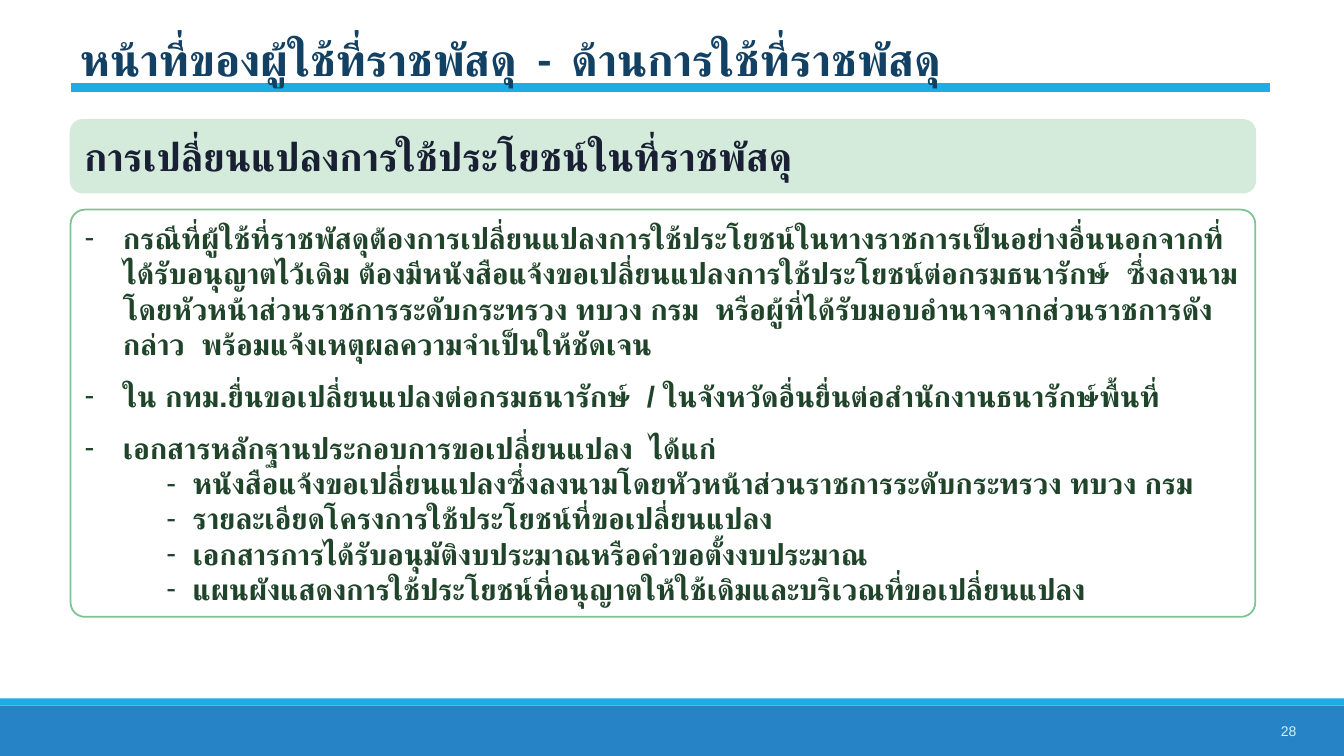
from dataclasses import dataclass

from lxml.etree import SubElement
from pptx import Presentation
from pptx.dml.color import RGBColor
from pptx.enum.shapes import MSO_CONNECTOR, MSO_SHAPE
from pptx.enum.text import MSO_ANCHOR, MSO_AUTO_SIZE, PP_ALIGN
from pptx.oxml.ns import qn
from pptx.util import Inches, Pt


@dataclass(frozen=True)
class Theme:
    """Colours, fonts and type sizes of the slide."""
    title_font: str = "Calibri"
    body_font: str = "Arial"
    title_color: str = "134163"
    heading_color: str = "1A2034"
    body_color: str = "1F442A"
    number_color: str = "D2EFFA"
    bar: str = "2683C6"
    accent: str = "1CADE4"
    heading_fill: str = "D4EBDB"
    panel_fill: str = "FFFFFF"
    panel_line: str = "7EC492"
    title_size: int = 32
    heading_size: int = 28
    body_size: int = 21
    number_size: int = 10
    outline_width: float = 1.25
    rule_width: int = 6


class SlideBuilder:
    """Draws styled elements on the current slide."""

    def __init__(self, slide, theme):
        self.slide = slide
        self.theme = theme

    def format_text(self, paragraph, size, color, font, bold=True):
        for run in paragraph.runs:
            run.font.size = Pt(size)
            run.font.bold = bold
            run.font.name = font
            run.font.color.rgb = RGBColor.from_string(color)
            SubElement(run.font._element, qn("a:cs")).set("typeface", font)

    def title(self, text, left, top, width, height):
        title = self.slide.shapes.title
        title.left, title.top = Inches(left), Inches(top)
        title.width, title.height = Inches(width), Inches(height)
        frame = title.text_frame
        frame.text = text
        frame.word_wrap = True
        frame.auto_size = MSO_AUTO_SIZE.NONE
        frame.vertical_anchor = MSO_ANCHOR.TOP
        paragraph = frame.paragraphs[0]
        paragraph.alignment = PP_ALIGN.LEFT
        self.format_text(paragraph, self.theme.title_size,
                         self.theme.title_color, self.theme.title_font)

    def box(self, kind, left, top, width, height, fill, line=None):
        shape = self.slide.shapes.add_shape(
            kind, Inches(left), Inches(top), Inches(width), Inches(height))
        shape.shadow.inherit = False
        shape.fill.solid()
        shape.fill.fore_color.rgb = RGBColor.from_string(fill)
        if line:
            shape.line.color.rgb = RGBColor.from_string(line)
            shape.line.width = Pt(self.theme.outline_width)
        else:
            shape.line.fill.background()
        return shape

    def rule(self, left, right, y):
        rule = self.slide.shapes.add_connector(
            MSO_CONNECTOR.STRAIGHT, Inches(left), Inches(y), Inches(right), Inches(y))
        rule.line.color.rgb = RGBColor.from_string(self.theme.accent)
        rule.line.width = Pt(self.theme.rule_width)
        SubElement(rule._element.spPr, qn("a:effectLst"))

    def heading(self, shape, text):
        frame = shape.text_frame
        frame.text = text
        frame.word_wrap = True
        frame.vertical_anchor = MSO_ANCHOR.MIDDLE
        paragraph = frame.paragraphs[0]
        paragraph.alignment = PP_ALIGN.LEFT
        self.format_text(paragraph, self.theme.heading_size,
                         self.theme.heading_color, self.theme.body_font)

    def bullets(self, shape, items):
        frame = shape.text_frame
        frame.word_wrap = True
        frame.vertical_anchor = MSO_ANCHOR.MIDDLE
        for index, (text, margin, hanging, space_before) in enumerate(items):
            paragraph = frame.add_paragraph() if index else frame.paragraphs[0]
            paragraph.text = text
            paragraph.alignment = PP_ALIGN.LEFT
            paragraph.space_before = Pt(space_before)
            properties = paragraph._p.get_or_add_pPr()
            properties.set("marL", str(Inches(margin)))
            properties.set("indent", str(-Inches(hanging)))
            SubElement(properties, qn("a:buFont")).set("typeface", self.theme.body_font)
            SubElement(properties, qn("a:buChar")).set("char", "-")
            self.format_text(paragraph, self.theme.body_size,
                             self.theme.body_color, self.theme.body_font)

    def page_number(self, text, left, top, width, height):
        text_box = self.slide.shapes.add_textbox(
            Inches(left), Inches(top), Inches(width), Inches(height))
        frame = text_box.text_frame
        frame.text = text
        frame.word_wrap = True
        frame.vertical_anchor = MSO_ANCHOR.MIDDLE
        paragraph = frame.paragraphs[0]
        paragraph.alignment = PP_ALIGN.CENTER
        self.format_text(paragraph, self.theme.number_size,
                         self.theme.number_color, self.theme.body_font, bold=False)


DUTIES = [
    "กรณีที่ผู้ใช้ที่ราชพัสดุต้องการเปลี่ยนแปลงการใช้ประโยชน์ในทางราชการเป็นอย่างอื่นนอกจากที่ได้รับอนุญาตไว้เดิม "
    "ต้องมีหนังสือแจ้งขอเปลี่ยนแปลงการใช้ประโยชน์ต่อกรมธนารักษ์  ซึ่งลงนามโดยหัวหน้าส่วนราชการระดับกระทรวง ทบวง กรม  "
    "หรือผู้ที่ได้รับมอบอำนาจจากส่วนราชการดังกล่าว  พร้อมแจ้งเหตุผลความจำเป็นให้ชัดเจน",
    "ใน กทม.ยื่นขอเปลี่ยนแปลงต่อกรมธนารักษ์  / ในจังหวัดอื่นยื่นต่อสำนักงานธนารักษ์พื้นที่",
    "เอกสารหลักฐานประกอบการขอเปลี่ยนแปลง  ได้แก่",
]
DOCUMENTS = [
    "หนังสือแจ้งขอเปลี่ยนแปลงซึ่งลงนามโดยหัวหน้าส่วนราชการระดับกระทรวง ทบวง กรม",
    "รายละเอียดโครงการใช้ประโยชน์ที่ขอเปลี่ยนแปลง",
    "เอกสารการได้รับอนุมัติงบประมาณหรือคำขอตั้งงบประมาณ",
    "แผนผังแสดงการใช้ประโยชน์ที่อนุญาตให้ใช้เดิมและบริเวณที่ขอเปลี่ยนแปลง",
]


def main():
    theme = Theme()
    presentation = Presentation()
    presentation.slide_width = Inches(13.33)
    presentation.slide_height = Inches(7.5)
    slide = presentation.slides.add_slide(presentation.slide_layouts[5])
    builder = SlideBuilder(slide, theme)

    builder.box(MSO_SHAPE.RECTANGLE, 0, 7, 13.33, 0.5, theme.bar)
    builder.box(MSO_SHAPE.RECTANGLE, 0, 6.93, 13.33, 0.07, theme.accent)
    builder.rule(0.7, 12.6, 0.87)
    builder.page_number("28", 12.32, 7.11, 0.92, 0.29)

    heading = builder.box(MSO_SHAPE.ROUNDED_RECTANGLE, 0.7, 1.19, 11.75, 0.72,
                          theme.heading_fill, theme.heading_fill)
    builder.heading(heading, "การเปลี่ยนแปลงการใช้ประโยชน์ในที่ราชพัสดุ")

    panel = builder.box(MSO_SHAPE.ROUNDED_RECTANGLE, 0.7, 2.08, 11.75, 4.04,
                        theme.panel_fill, theme.panel_line)
    panel.adjustments[0] = 0.035
    duties = [(text, 0.38, 0.38, 12 if index else 0) for index, text in enumerate(DUTIES)]
    documents = [(text, 1.07, 0.26, 0) for text in DOCUMENTS]
    builder.bullets(panel, duties + documents)

    builder.title("หน้าที่ของผู้ใช้ที่ราชพัสดุ  -  ด้านการใช้ที่ราชพัสดุ", 0.7, 0.26, 11.91, 0.64)
    slide.shapes._spTree.append(slide.shapes.title._element)
    presentation.save("out.pptx")


if __name__ == "__main__":
    main()
